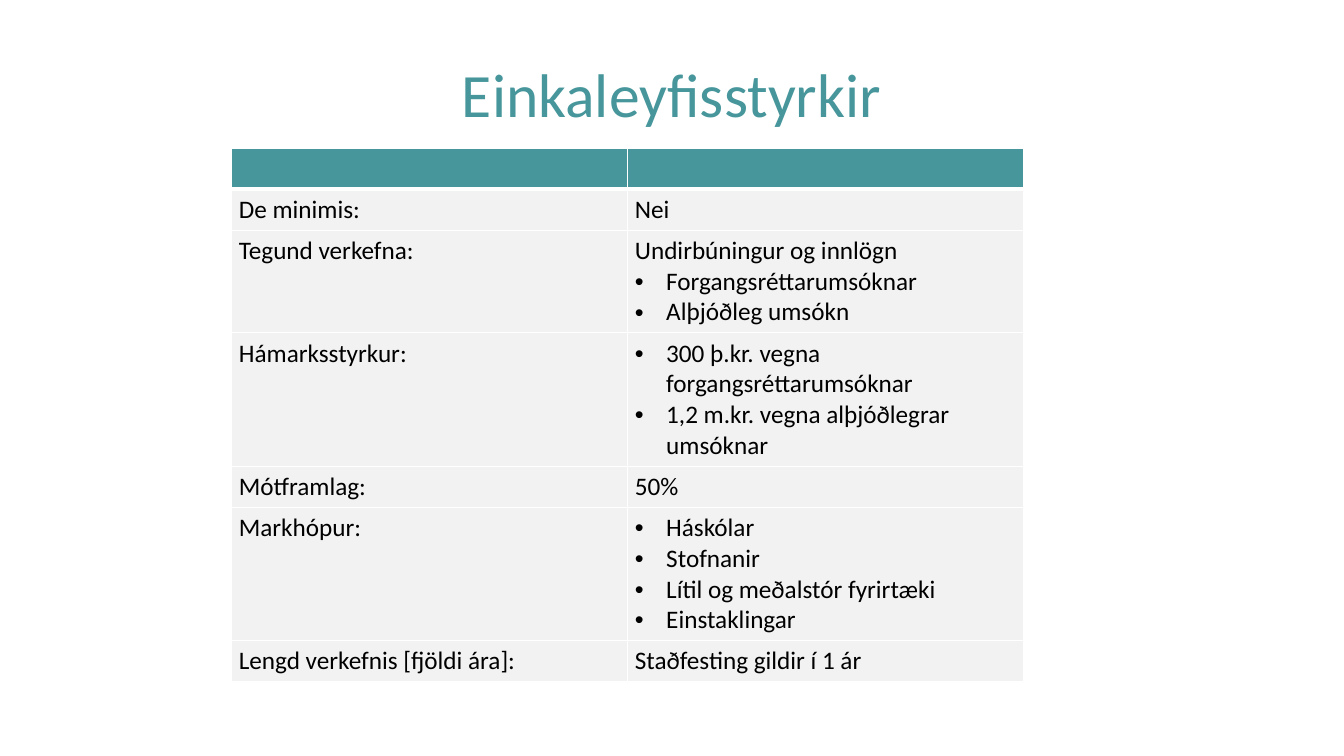
import dataclasses
import typing

import pptx
import pptx.dml.color
import pptx.enum.text
import pptx.oxml
import pptx.oxml.ns
import pptx.util

Cm = pptx.util.Cm
Pt = pptx.util.Pt
Align = pptx.enum.text.PP_ALIGN
Anchor = pptx.enum.text.MSO_ANCHOR


@dataclasses.dataclass(frozen=True)
class Theme:
    font: str = "Calibri"
    teal: str = "46969B"
    grey: str = "F2F2F2"
    white: str = "FFFFFF"
    black: str = "000000"
    head: int = 44
    body: int = 18
    thin: int = 1
    thick: int = 3


@dataclasses.dataclass(frozen=True)
class Row:
    label: str = ""
    lead: str = ""
    points: tuple[str, ...] = ()
    lines: int = 1


THEME = Theme()
ROWS = (
    Row(),
    Row("De minimis:", "Nei"),
    Row("Tegund verkefna:", "Undirbúningur og innlögn",
        ("Forgangsréttarumsóknar", "Alþjóðleg umsókn"), 3),
    Row("Hámarksstyrkur:", "",
        ("300 þ.kr. vegna forgangsréttarumsóknar",
         "1,2 m.kr. vegna alþjóðlegrar umsóknar"), 4),
    Row("Mótframlag:", "50%"),
    Row("Markhópur:", "",
        ("Háskólar", "Stofnanir", "Lítil og meðalstór fyrirtæki",
         "Einstaklingar"), 4),
    Row("Lengd verkefnis [fjöldi ára]:", "Staðfesting gildir í 1 ár"),
)


def paint(fill: typing.Any, shade: str) -> None:
    fill.solid()
    fill.fore_color.rgb = pptx.dml.color.RGBColor.from_string(shade)


def write(para: typing.Any, text: str, *, size: int = THEME.body,
          shade: str = THEME.black, align: typing.Any = Align.LEFT,
          dot: bool = False) -> None:
    para.alignment = align
    if dot:
        props = para._p.get_or_add_pPr()
        props.set("marL", str(Cm(0.79)))
        props.set("indent", str(-Cm(0.79)))
        space = pptx.oxml.ns.nsdecls("a")
        props.append(pptx.oxml.parse_xml(
            f'<a:buFont {space} typeface="Arial"/>'))
        props.append(pptx.oxml.parse_xml(f'<a:buChar {space} char="•"/>'))
    run = para.add_run()
    run.text = text
    run.font.name = THEME.font
    run.font.size = Pt(size)
    run.font.color.rgb = pptx.dml.color.RGBColor.from_string(shade)


def edge(cell: typing.Any, side: str, width: int) -> None:
    cell._tc.get_or_add_tcPr().append(pptx.oxml.parse_xml(
        f'<a:ln{side} {pptx.oxml.ns.nsdecls("a")} w="{Pt(width)}">'
        f'<a:solidFill><a:srgbClr val="{THEME.white}"/></a:solidFill>'
        f'</a:ln{side}>'))


def fill_cell(cell: typing.Any, lead: str, points: tuple[str, ...],
              place: int) -> None:
    cell.margin_left = cell.margin_right = Cm(0.18)
    cell.margin_top = cell.margin_bottom = Cm(0.13)
    heavy = {0: "B", 1: "T"}.get(place)
    for side in "LRTB":
        edge(cell, side, THEME.thick if side == heavy else THEME.thin)
    paint(cell.fill, THEME.grey if place else THEME.teal)
    items = [(lead, False)] if lead else []
    items += [(point, True) for point in points]
    frame = cell.text_frame
    for rank, (text, dot) in enumerate(items):
        para = frame.add_paragraph() if rank else frame.paragraphs[0]
        write(para, text, dot=dot)


def add_title(slide: typing.Any, text: str) -> None:
    title = slide.shapes.title
    title.left, title.top = Cm(1.69), Cm(0.76)
    title.width, title.height = Cm(30.48), Cm(3.18)
    paint(title.fill, THEME.white)
    title.text_frame.vertical_anchor = Anchor.MIDDLE
    write(title.text_frame.paragraphs[0], text, size=THEME.head,
          shade=THEME.teal, align=Align.CENTER)


def add_grid(slide: typing.Any, rows: tuple[Row, ...]) -> None:
    grid = slide.shapes.add_table(
        len(rows), 2, Cm(5.84), Cm(3.73), Cm(19.96), Cm(13.23)).table
    grid.horz_banding = False
    for place, row in enumerate(rows):
        grid.rows[place].height = Cm(0.25 + 0.77 * row.lines)
        fill_cell(grid.cell(place, 0), row.label, (), place)
        fill_cell(grid.cell(place, 1), row.lead, row.points, place)


def main() -> None:
    deck = pptx.Presentation()
    deck.slide_width, deck.slide_height = Cm(33.87), Cm(19.05)
    slide = deck.slides.add_slide(deck.slide_layouts[5])
    add_title(slide, "Einkaleyfisstyrkir")
    add_grid(slide, ROWS)
    deck.save("out.pptx")


if __name__ == "__main__":
    main()
